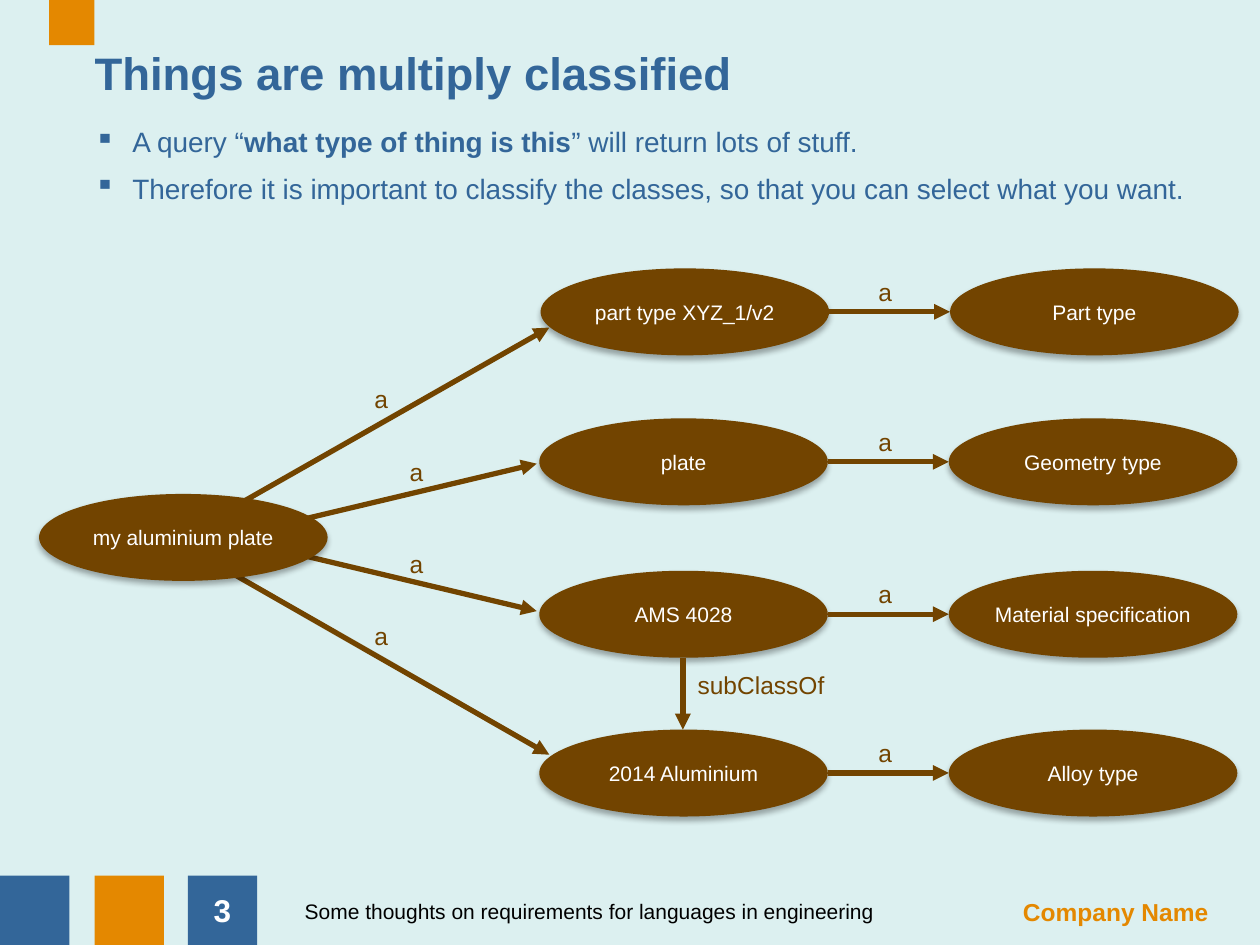
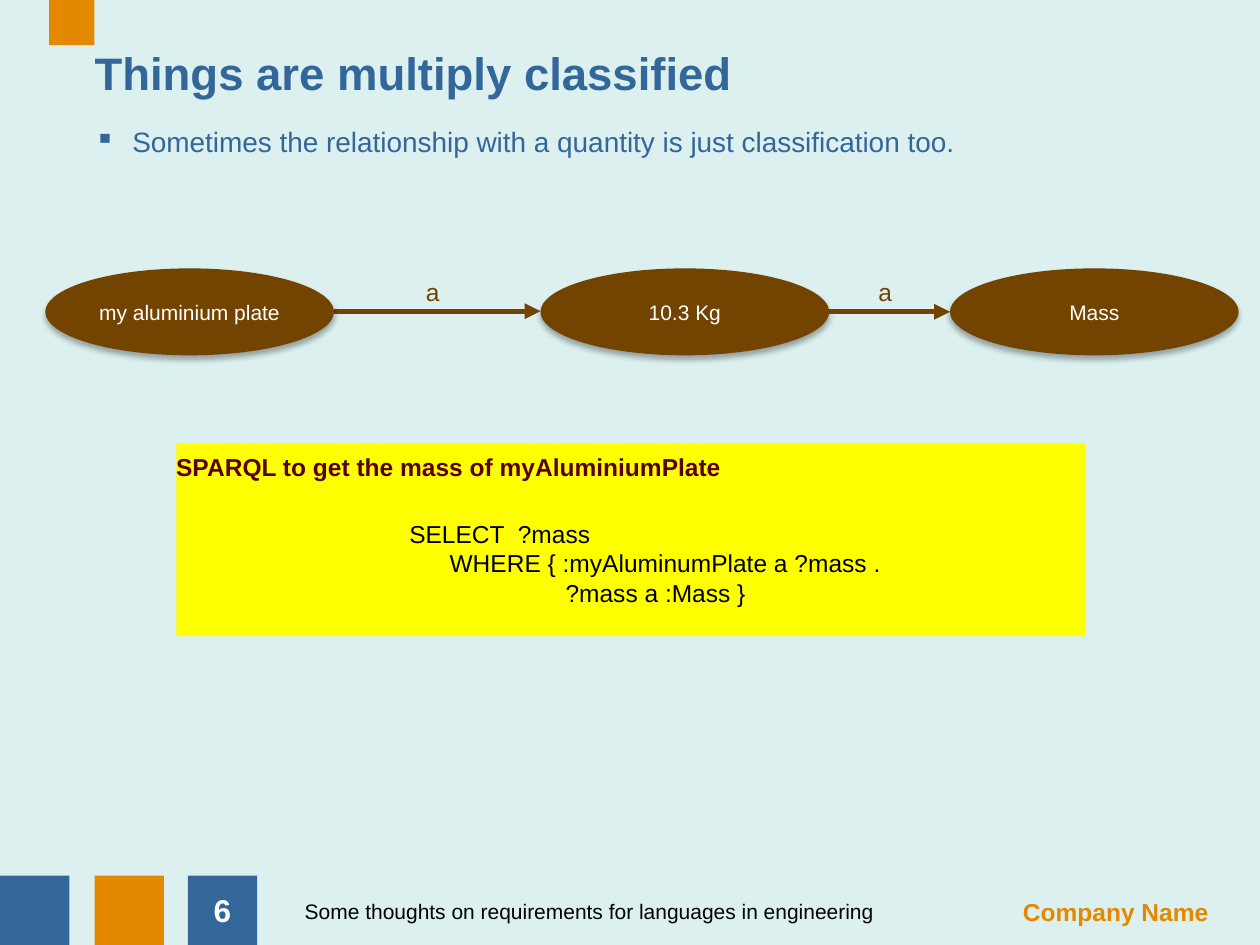
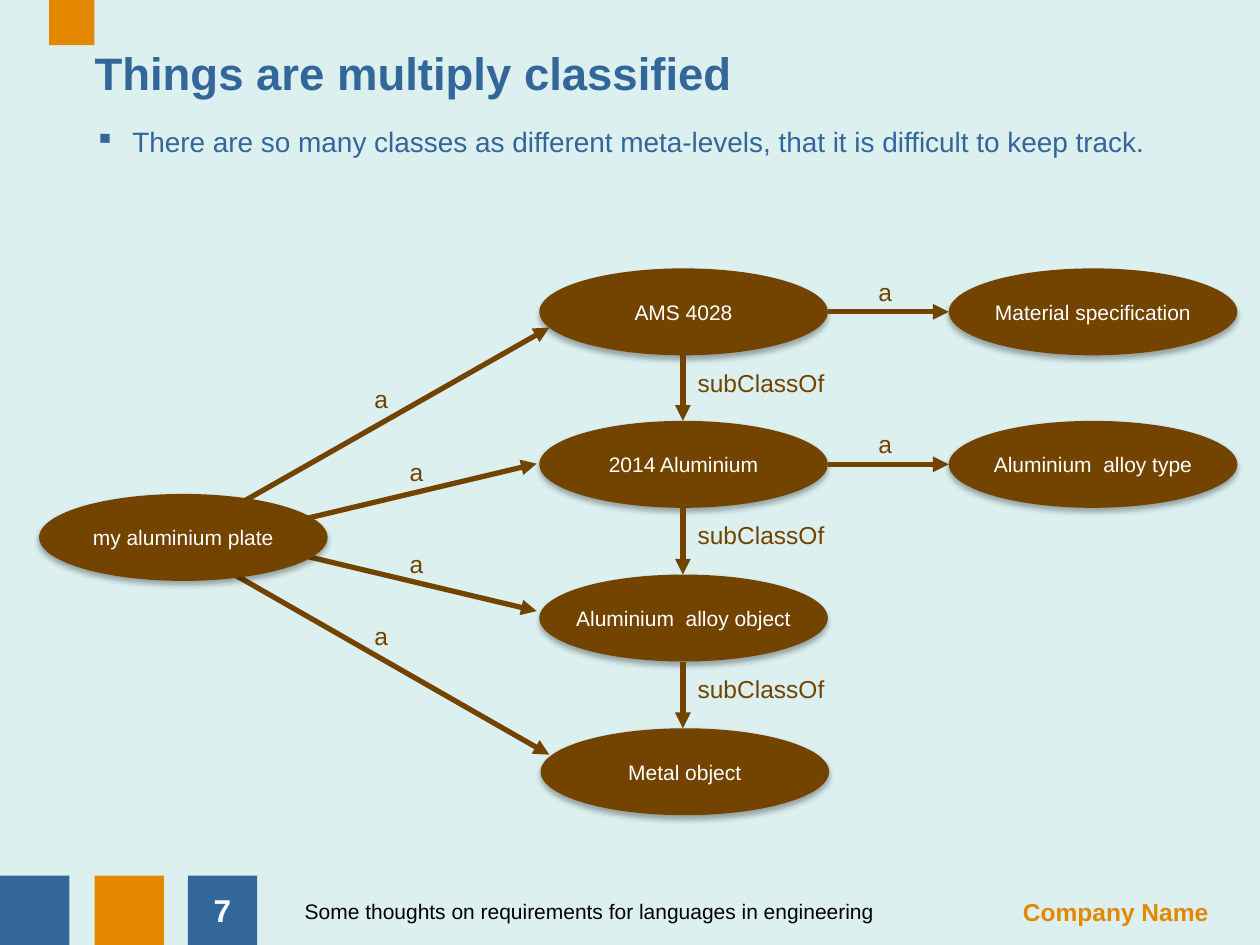
from lxml import etree
from pptx import Presentation
from pptx.dml.color import RGBColor
from pptx.enum.shapes import MSO_CONNECTOR, MSO_SHAPE
from pptx.enum.text import MSO_ANCHOR, MSO_AUTO_SIZE, PP_ALIGN
from pptx.oxml.ns import qn
from pptx.util import Inches, Pt

RECT, ELLIPSE = MSO_SHAPE.RECTANGLE, MSO_SHAPE.OVAL
STRAIGHT = MSO_CONNECTOR.STRAIGHT
LEFT, CENTER, RIGHT = PP_ALIGN.LEFT, PP_ALIGN.CENTER, PP_ALIGN.RIGHT
TOP, MIDDLE = MSO_ANCHOR.TOP, MSO_ANCHOR.MIDDLE
NO_FIT = MSO_AUTO_SIZE.NONE
TITLE_ONLY = 5

FONT = "Arial"
PALE, BLUE, ORANGE, BROWN = "DCF0F0", "336699", "E48800", "724400"
WHITE, BLACK, YELLOW, MAROON = "FFFFFF", "000000", "FFFF00", "5A0000"

NODE_W, NODE_H = 2.29, 0.69
CLASS_X, META_GAP = 4.28, 3.25
SUBCLASS_X = 5.42
SPOKES = [
    ((1.44, 4.26), (4.36, 2.6), (2.84, 3)),
    ((1.57, 4.32), (4.26, 3.68), (3.12, 3.58)),
    ((1.57, 4.21), (4.26, 4.85), (3.12, 4.31)),
    ((1.44, 4.32), (4.36, 5.99), (2.84, 4.88)),
]


def rgb(hex_color):
    return RGBColor.from_string(hex_color)


def inches(*lengths):
    return [Inches(length) for length in lengths]


def style(paragraph, size, color, bold=False, align=LEFT):
    paragraph.alignment = align
    font = paragraph.font
    font.name, font.size, font.bold = FONT, Pt(size), bold
    font.color.rgb = rgb(color)


def clear_margins(frame):
    frame.margin_left = frame.margin_right = 0
    frame.margin_top = frame.margin_bottom = 0


def add_text(slide, box, text, size, color, bold=False, align=LEFT, anchor=TOP):
    frame = slide.shapes.add_textbox(*inches(*box)).text_frame
    frame.word_wrap = True
    frame.vertical_anchor = anchor
    frame.text = text
    for paragraph in frame.paragraphs:
        style(paragraph, size, color, bold, align)
    return frame


def add_block(slide, kind, box, fill):
    block = slide.shapes.add_shape(kind, *inches(*box))
    block.fill.solid()
    block.fill.fore_color.rgb = rgb(fill)
    block.line.fill.background()
    block.shadow.inherit = False
    return block


def add_node(slide, x, y, text):
    node = add_block(slide, ELLIPSE, (x, y, NODE_W, NODE_H), BROWN)
    effects = node._element.spPr.find(qn("a:effectLst"))
    shadow = etree.SubElement(
        effects, qn("a:outerShdw"), blurRad=str(Pt(3.5)), dist=str(Pt(2.2)),
        dir="5400000", rotWithShape="0")
    tint = etree.SubElement(shadow, qn("a:srgbClr"), val=BLACK)
    etree.SubElement(tint, qn("a:alpha"), val="32000")
    frame = node.text_frame
    frame.word_wrap = False
    frame.vertical_anchor = MIDDLE
    frame.text = text
    style(frame.paragraphs[0], 12, WHITE, align=CENTER)


def add_arrow(slide, start, end):
    arrow = slide.shapes.add_connector(STRAIGHT, *inches(*start, *end))
    arrow.line.color.rgb = rgb(BROWN)
    arrow.line.width = Pt(3)
    properties = arrow._element.spPr
    etree.SubElement(properties.find(qn("a:ln")), qn("a:tailEnd"), type="triangle")
    etree.SubElement(properties, qn("a:effectLst"))


def add_label(slide, x, y, text="a", width=0.37):
    add_text(slide, (x, y, width, 0.34), text, 14, BROWN, align=CENTER)


def add_classification(slide, y, name, meta, x=CLASS_X):
    middle = y + NODE_H / 2
    add_node(slide, x, y, name)
    add_arrow(slide, (x + NODE_W, middle), (x + META_GAP, middle))
    add_label(slide, 6.84, y + 0.02)
    add_node(slide, x + META_GAP, y, meta)


def add_subclass(slide, upper_y, lower_y):
    add_arrow(slide, (SUBCLASS_X, upper_y + NODE_H), (SUBCLASS_X, lower_y))
    add_label(slide, 5.25, upper_y + 0.74, "subClassOf", 1.58)


def add_fan(slide):
    for start, end, label in SPOKES:
        add_arrow(slide, start, end)
        add_label(slide, *label)
    add_node(slide, 0.31, 3.92, "my aluminium plate")


def add_bullets(slide, bullets):
    frame = add_text(slide, (0.75, 0.99, 8.89, 1.1), "", 16, BLUE)
    clear_margins(frame)
    for index, runs in enumerate(bullets):
        paragraph = frame.add_paragraph() if index else frame.paragraphs[0]
        properties = paragraph._p.get_or_add_pPr()
        properties.set("marL", str(Inches(0.3)))
        properties.set("indent", str(Inches(-0.3)))
        if properties.find(qn("a:defRPr")) is not None:
            properties.remove(properties.find(qn("a:defRPr")))
        etree.SubElement(properties, qn("a:buChar"), char="▪")
        paragraph.space_before = Pt(7.4)
        style(paragraph, 16, BLUE)
        for text, bold in runs:
            run = paragraph.add_run()
            run.text = text
            run.font.bold = bold


def add_base(deck, number, bullets):
    slide = deck.slides.add_slide(deck.slide_layouts[TITLE_ONLY])
    for x, color in ((1.49, BLUE), (0.75, ORANGE), (0, BLUE)):
        add_block(slide, RECT, (x, 6.95, 0.55, 0.55), color)
    add_block(slide, RECT, (0.39, 0, 0.36, 0.36), ORANGE)
    add_text(slide, (7.4, 7.07, 2.29, 0.34), "Company Name", 14, ORANGE, True, RIGHT)
    add_text(slide, (2.32, 6.96, 5.08, 0.55),
             "Some thoughts on requirements for languages in engineering",
             12, BLACK, anchor=MIDDLE)
    add_text(slide, (1.41, 6.95, 0.71, 0.55), str(number), 18, WHITE, True, CENTER, MIDDLE)

    title = slide.shapes.title
    title.left, title.top, title.width, title.height = inches(0.75, 0.36, 8.5, 0.82)
    frame = title.text_frame
    frame.text = "Things are multiply classified"
    frame.auto_size = NO_FIT
    frame.vertical_anchor = TOP
    clear_margins(frame)
    style(frame.paragraphs[0], 26, BLUE, True)
    add_bullets(slide, bullets)
    return slide


def add_query(slide):
    add_block(slide, RECT, (1.4, 3.52, 7.21, 1.53), YELLOW)
    lines = ["SELECT  ?mass", "WHERE { :myAluminumPlate a ?mass .", "?mass a :Mass }"]
    query = add_text(slide, (3.15, 4.07, 4.2, 0.81), "\n".join(lines), 14, BLACK)
    for paragraph, indent in zip(query.paragraphs, (0, 0.32, 1.24)):
        paragraph._p.get_or_add_pPr().set("marL", str(Inches(indent)))
    add_text(slide, (1.3, 3.54, 4.8, 0.34),
             "SPARQL to get the mass of myAluminiumPlate", 14, MAROON, True)


def build_types(deck):
    slide = add_base(deck, 3, [
        [("A query “", False), ("what type of thing is this", True),
         ("” will return lots of stuff.", False)],
        [("Therefore it is important to classify the classes, "
          "so that you can select what you want.", False)],
    ])
    add_classification(slide, 2.13, "part type XYZ_1/v2", "Part type", 4.29)
    add_classification(slide, 3.32, "plate", "Geometry type")
    add_classification(slide, 4.53, "AMS 4028", "Material specification")
    add_classification(slide, 5.79, "2014 Aluminium", "Alloy type")
    add_fan(slide)
    add_subclass(slide, 4.53, 5.79)


def build_quantity(deck):
    slide = add_base(deck, 6, [
        [("Sometimes the relationship with a quantity is just classification too.", False)],
    ])
    add_classification(slide, 2.13, "10.3 Kg", "Mass", 4.29)
    add_arrow(slide, (2.65, 2.47), (4.29, 2.47))
    add_node(slide, 0.36, 2.13, "my aluminium plate")
    add_label(slide, 3.25, 2.15)
    add_query(slide)


def build_levels(deck):
    slide = add_base(deck, 7, [
        [("There are so many classes as different meta-levels, "
          "that it is difficult to keep track.", False)],
    ])
    levels = (2.13, 3.34, 4.56, 5.78)
    add_classification(slide, levels[0], "AMS 4028", "Material specification")
    add_classification(slide, levels[1], "2014 Aluminium", "Aluminium  alloy type")
    add_node(slide, CLASS_X, levels[2], "Aluminium  alloy object")
    add_node(slide, 4.29, levels[3], "Metal object")
    add_fan(slide)
    for upper_y, lower_y in zip(levels, levels[1:]):
        add_subclass(slide, upper_y, lower_y)


def main():
    deck = Presentation()
    deck.slide_width, deck.slide_height = inches(10, 7.5)
    backdrop = deck.slide_master.background.fill
    backdrop.solid()
    backdrop.fore_color.rgb = rgb(PALE)
    build_types(deck)
    build_quantity(deck)
    build_levels(deck)
    deck.save("out.pptx")


if __name__ == "__main__":
    main()
